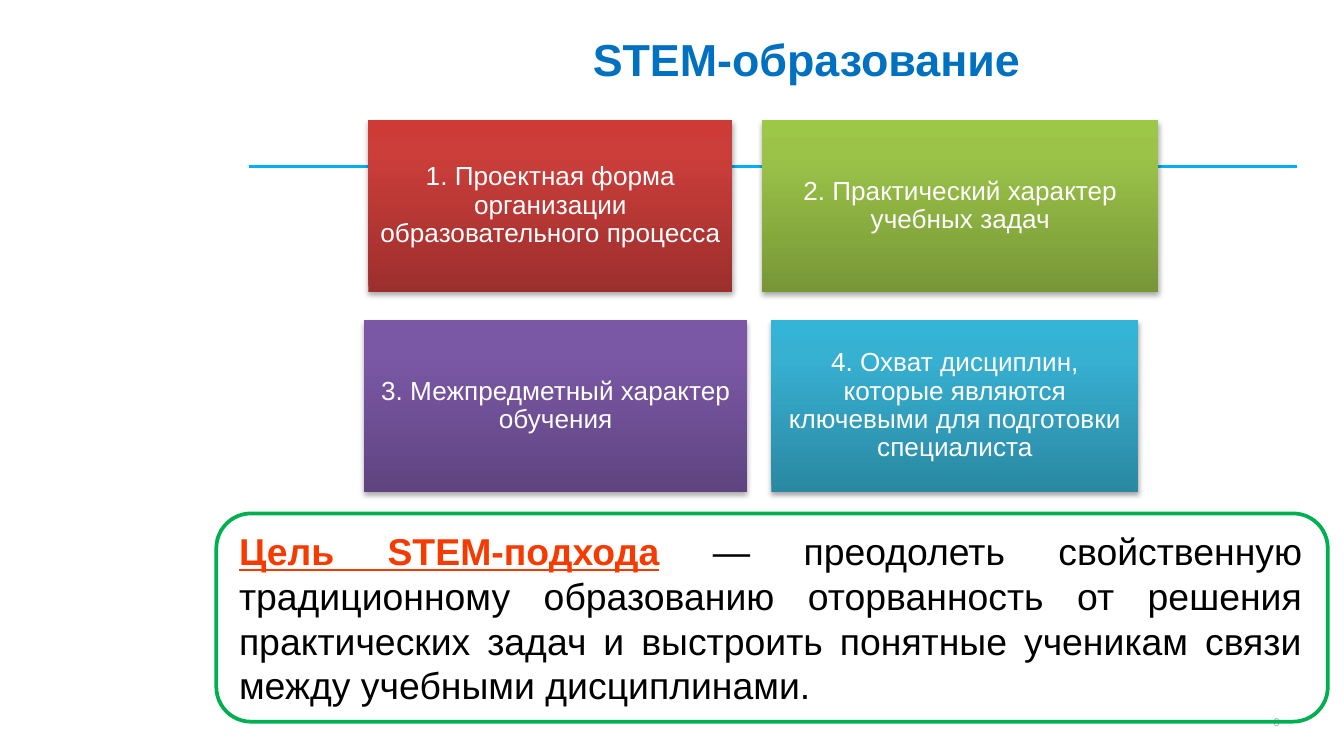
from copy import deepcopy

from lxml import etree
from pptx import Presentation
from pptx.dml.color import RGBColor
from pptx.enum.shapes import MSO_CONNECTOR, MSO_SHAPE
from pptx.enum.text import MSO_ANCHOR, PP_ALIGN
from pptx.oxml.ns import qn
from pptx.util import Inches, Pt

RECT, ROUND = MSO_SHAPE.RECTANGLE, MSO_SHAPE.ROUNDED_RECTANGLE
STRAIGHT = MSO_CONNECTOR.STRAIGHT
TOP, MIDDLE = MSO_ANCHOR.TOP, MSO_ANCHOR.MIDDLE
CENTER, RIGHT, JUSTIFY = PP_ALIGN.CENTER, PP_ALIGN.RIGHT, PP_ALIGN.JUSTIFY

THEME = {
    "font": "Arial",
    "rule": "00B0F0",
    "frame": "00B050",
    "title": {"size": 24, "color": "0070C0", "bold": True},
    "card": {"size": 14, "color": "FFFFFF"},
    "goal": {"size": 20, "color": "F63B00", "bold": True, "underline": True},
    "body": {"size": 20, "color": "000000"},
    "number": {"size": 6, "color": "A6A6A6"},
}

TITLE = "STEM-образование"
NUMBER = "6"
GOAL = [
    ("Цель STEM-подхода", "goal"),
    (" — преодолеть свойственную традиционному образованию оторванность "
     "от решения практических задач и выстроить понятные ученикам связи "
     "между учебными дисциплинами.", "body"),
]

CARD_ROWS = [
    [("1. Проектная форма организации образовательного процесса",
      2.74, 2.71, ("9C2F2D", "CB3E3A", "CE3B37")),
     ("2. Практический характер учебных задач",
      5.67, 2.95, ("779737", "9BC348", "9DC746"))],
    [("3. Межпредметный характер обучения",
      2.71, 2.85, ("5F4480", "7B58A6", "7C57A8")),
     ("4. Охват дисциплин, которые являются ключевыми для подготовки специалиста",
      5.74, 2.73, ("2A88A2", "37B1D2", "34B4D6"))],
]
CARD_TOP, CARD_HEIGHT, ROW_STEP = 0.89, 1.28, 1.49
STOPS = (0, 0.8, 1)


def box(*lengths):
    return [Inches(v) for v in lengths]


def write(sp, runs, align, anchor=MIDDLE, inset=None):
    tf = sp.text_frame
    tf.word_wrap = True
    tf.vertical_anchor = anchor
    if inset is not None:
        for side in ("left", "top", "right", "bottom"):
            setattr(tf, f"margin_{side}", Inches(inset))
    p = tf.paragraphs[0]
    p.alignment = align
    for text, style in runs:
        r = p.add_run()
        r.text = text
        r.font.name = THEME["font"]
        for name, value in THEME[style].items():
            if name == "color":
                r.font.color.rgb = RGBColor.from_string(value)
            else:
                setattr(r.font, name, Pt(value) if name == "size" else value)
    return p


def add_gradient(sp, colors):
    sp.fill.gradient()
    sp.fill.gradient_angle = 90
    stops = sp._element.spPr.find(qn("a:gradFill")).find(qn("a:gsLst"))
    stops.append(deepcopy(stops[-1]))
    for stop, position, color in zip(sp.fill.gradient_stops, STOPS, colors):
        stop.color.rgb = RGBColor.from_string(color)
        stop.position = position


def add_shadow(sp):
    effects = sp._element.spPr.find(qn("a:effectLst"))
    shadow = etree.SubElement(effects, qn("a:outerShdw"), blurRad=str(Pt(3.1)),
                              dist=str(Pt(1.8)), dir="5400000", rotWithShape="0")
    color = etree.SubElement(shadow, qn("a:srgbClr"), val="000000")
    etree.SubElement(color, qn("a:alpha"), val="35000")


def add_card(s, text, left, top, width, colors):
    sp = s.shapes.add_shape(RECT, *box(left, top, width, CARD_HEIGHT))
    sp.shadow.inherit = False
    add_gradient(sp, colors)
    sp.line.fill.background()
    add_shadow(sp)
    p = write(sp, [(text, "card")], CENTER, inset=0.06)
    p.line_spacing = 0.9


def main():
    prs = Presentation()
    prs.slide_width = Inches(10)
    prs.slide_height = prs.slide_width * 9 // 16
    s = prs.slides.add_slide(prs.slide_layouts[5])

    title = s.shapes.title
    title.left, title.top, title.width, title.height = box(2.11, -0.02, 7.78, 0.91)
    write(title, [(TITLE, "title")], CENTER)

    rule = s.shapes.add_connector(STRAIGHT, *box(1.85, 1.24, 9.65, 1.24))
    rule.line.color.rgb = RGBColor.from_string(THEME["rule"])
    rule.line.width = Pt(1.5)
    etree.SubElement(rule._element.spPr, qn("a:effectLst"))

    number = s.shapes.add_textbox(*box(9.15, 5.25, 0.47, 0.24))
    write(number, [(NUMBER, "number")], RIGHT)

    for i, row in enumerate(CARD_ROWS):
        for text, left, width, colors in row:
            add_card(s, text, left, CARD_TOP + i * ROW_STEP, width, colors)

    goal = s.shapes.add_textbox(*box(1.68, 3.88, 8.11, 1.45))
    write(goal, GOAL, JUSTIFY, TOP)

    frame = s.shapes.add_shape(ROUND, *box(1.61, 3.82, 8.27, 1.55))
    frame.shadow.inherit = False
    frame.fill.background()
    frame.line.color.rgb = RGBColor.from_string(THEME["frame"])
    frame.line.width = Pt(2)

    prs.save("out.pptx")


if __name__ == "__main__":
    main()
